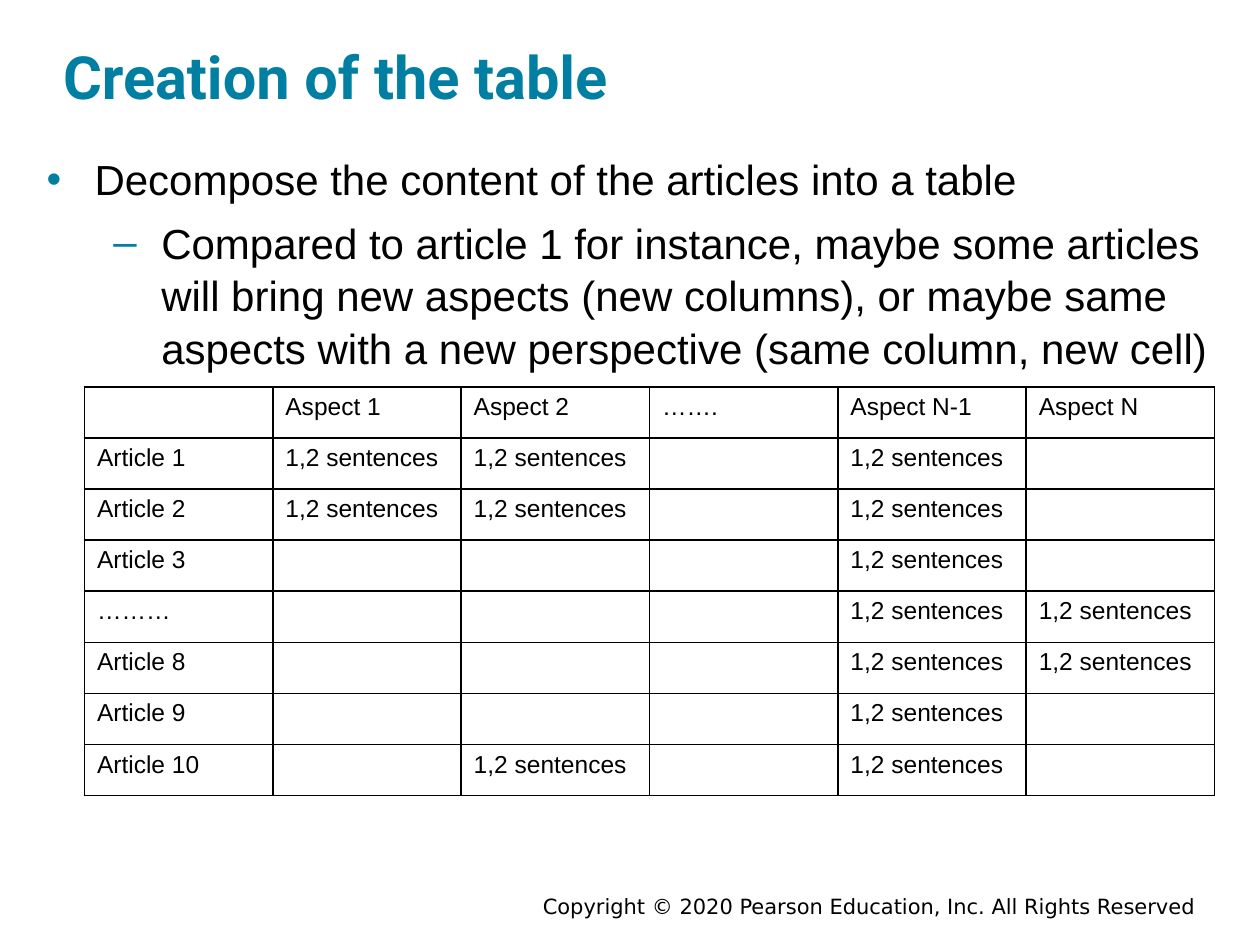
from lxml import etree
from pptx import Presentation
from pptx.dml.color import RGBColor
from pptx.enum.text import MSO_ANCHOR, MSO_AUTO_SIZE, PP_ALIGN
from pptx.oxml.ns import qn
from pptx.util import Inches, Pt

LEFT, RIGHT = PP_ALIGN.LEFT, PP_ALIGN.RIGHT
TOP, MIDDLE = MSO_ANCHOR.TOP, MSO_ANCHOR.MIDDLE
NO_AUTOFIT = MSO_AUTO_SIZE.NONE
TEAL, BLACK = "007FA3", "000000"
BORDER_SIDES = ("a:lnL", "a:lnR", "a:lnT", "a:lnB")

NOTE = "1,2 sentences"
ASPECTS = ["Aspect 1", "Aspect 2", "…….", "Aspect N-1", "Aspect N"]
ARTICLES = {
    "Article 1": (1, 2, 4),
    "Article 2": (1, 2, 4),
    "Article 3": (4,),
    "………": (4, 5),
    "Article 8": (4, 5),
    "Article 9": (4,),
    "Article 10": (2, 4),
}


def rgb(color):
    """Turn a hex string into a colour."""
    return RGBColor.from_string(color)


def write(paragraph, text, size=14, font="Arial", color=BLACK, bold=False, align=LEFT):
    """Add formatted text to a paragraph."""
    paragraph.alignment = align
    run = paragraph.add_run()
    run.text = text
    run.font.size = Pt(size)
    run.font.name = font
    run.font.bold = bold
    run.font.color.rgb = rgb(color)


def place(shape, left, top, width, height):
    """Move and size a shape, in inches."""
    shape.left, shape.top = Inches(left), Inches(top)
    shape.width, shape.height = Inches(width), Inches(height)


def set_frame(frame, anchor, top=0, bottom=0):
    """Set the anchor, wrapping and margins of a text frame."""
    frame.word_wrap = True
    frame.auto_size = NO_AUTOFIT
    frame.vertical_anchor = anchor
    frame.margin_left = frame.margin_right = 0
    frame.margin_top, frame.margin_bottom = Inches(top), Inches(bottom)


def set_bullet(paragraph, char, indent, hanging=0.38):
    """Give a paragraph a teal bullet with a hanging indent."""
    properties = paragraph._p.get_or_add_pPr()
    properties.set("marL", str(Inches(indent)))
    properties.set("indent", str(-Inches(hanging)))
    bullet_color = etree.SubElement(properties, qn("a:buClr"))
    etree.SubElement(bullet_color, qn("a:srgbClr"), val=TEAL)
    etree.SubElement(properties, qn("a:buChar"), char=char)


def set_borders(cell, color=BLACK, width=1):
    """Draw all four borders of a cell and leave it unfilled."""
    properties = cell._tc.get_or_add_tcPr()
    for side in BORDER_SIDES:
        line = etree.SubElement(properties, qn(side), w=str(Pt(width)))
        fill = etree.SubElement(line, qn("a:solidFill"))
        etree.SubElement(fill, qn("a:srgbClr"), val=color)
    cell.fill.background()


def add_title(slide, text):
    """Fill the title placeholder."""
    title = slide.shapes.title
    place(title, 0.5, 0.14, 9, 0.82)
    set_frame(title.text_frame, MIDDLE, top=0.1)
    write(title.text_frame.paragraphs[0], text, size=34, font="Roboto", color=TEAL, bold=True)


def add_points(slide, point, detail):
    """Fill the body placeholder with a point and its detail."""
    body = slide.placeholders[1]
    place(body, 0.37, 1.2, 9.63, 4.79)
    frame = body.text_frame
    set_frame(frame, TOP)
    main_point, sub_point = frame.paragraphs[0], frame.add_paragraph()
    sub_point.level = 1
    set_bullet(main_point, "•", 0.38)
    set_bullet(sub_point, "–", 0.91)
    for paragraph, text, before in ((main_point, point, 0), (sub_point, detail, 6)):
        paragraph.space_before = Pt(before)
        paragraph.line_spacing = 1.05
        write(paragraph, text, size=24)


def add_article_table(slide):
    """Add the grid of articles against aspects."""
    rows = [["", *ASPECTS]]
    for article, covered in ARTICLES.items():
        notes = [NOTE if column in covered else "" for column in range(1, len(ASPECTS) + 1)]
        rows.append([article, *notes])
    table = slide.shapes.add_table(
        len(rows), len(rows[0]), Inches(0.67), Inches(3.07), Inches(8.97), Inches(3.24)
    ).table
    table.first_row = table.horz_banding = False
    for row_number, row in enumerate(rows):
        for column, text in enumerate(row):
            cell = table.cell(row_number, column)
            set_borders(cell)
            if text:
                write(cell.text_frame.paragraphs[0], text)


def add_copyright(slide, text):
    """Add the copyright line at the bottom right."""
    frame = slide.shapes.add_textbox(
        Inches(4.23), Inches(7.07), Inches(5.26), Inches(0.24)
    ).text_frame
    set_frame(frame, MIDDLE, top=0.02, bottom=0.02)
    write(frame.paragraphs[0], text, size=12, font="DejaVu Sans", align=RIGHT)


def main():
    """Build and save the slide."""
    deck = Presentation()
    deck.slide_width, deck.slide_height = Inches(10), Inches(7.5)
    slide = deck.slides.add_slide(deck.slide_layouts[1])
    add_copyright(slide, "Copyright © 2020 Pearson Education, Inc. All Rights Reserved")
    add_title(slide, "Creation of the table")
    add_points(
        slide,
        "Decompose the content of the articles into a table",
        "Compared to article 1 for instance, maybe some articles will bring new aspects "
        "(new columns), or maybe same aspects with a new perspective (same column, new cell)",
    )
    add_article_table(slide)
    deck.save("out.pptx")


if __name__ == "__main__":
    main()
